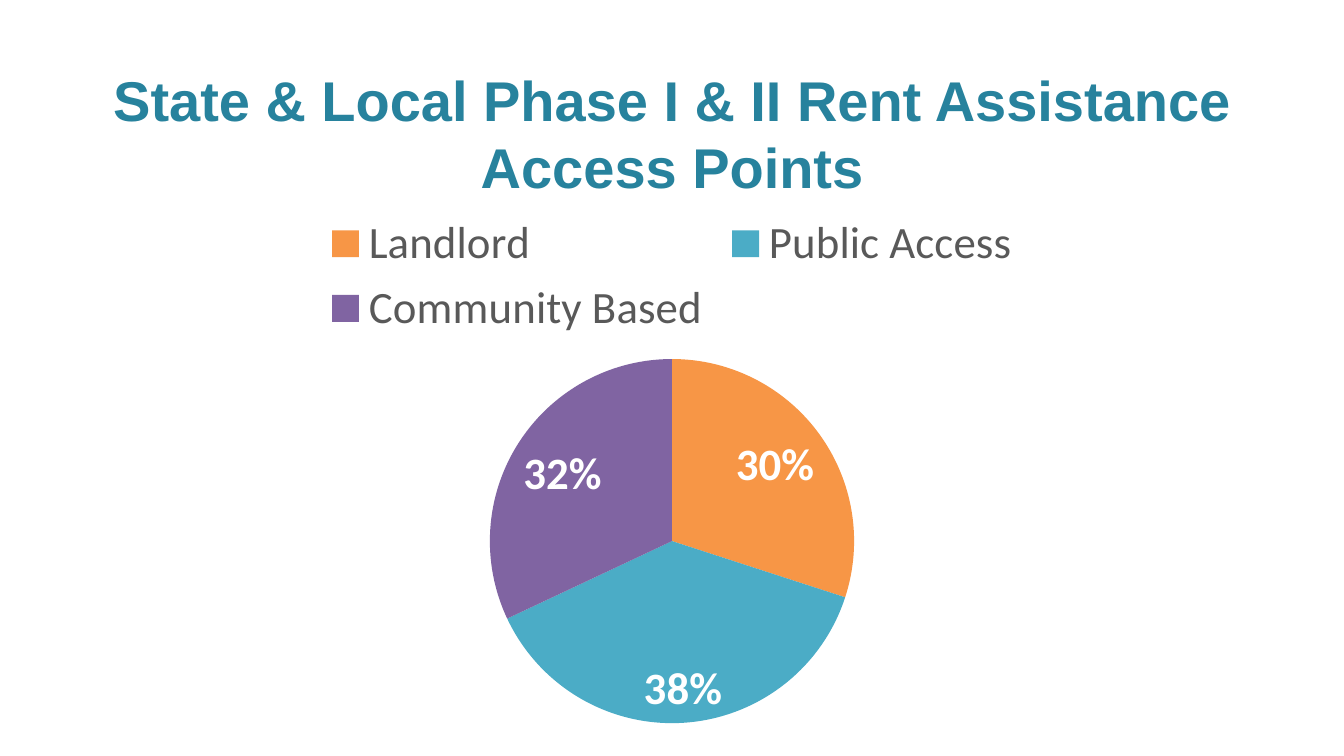
from pptx import Presentation
from pptx.chart.data import CategoryChartData
from pptx.dml.color import RGBColor
from pptx.enum.chart import XL_CHART_TYPE, XL_LABEL_POSITION, XL_LEGEND_POSITION
from pptx.enum.text import MSO_ANCHOR, PP_ALIGN
from pptx.util import Inches, Pt

TITLE_TEAL = RGBColor(0x27, 0x82, 0x9D)
LEGEND_GRAY = RGBColor(0x59, 0x59, 0x59)
WHITE = RGBColor(0xFF, 0xFF, 0xFF)
BLACK = RGBColor(0x00, 0x00, 0x00)
ORANGE = RGBColor(0xF7, 0x96, 0x46)
TEAL = RGBColor(0x4B, 0xAC, 0xC6)
PURPLE = RGBColor(0x80, 0x64, 0xA2)

SLIDE_WIDTH, SLIDE_HEIGHT = Inches(13.33), Inches(7.5)
ACCESS_POINTS = [
    ("Landlord", 30, ORANGE),
    ("Public Access", 38, TEAL),
    ("Community Based", 32, PURPLE),
]


def format_font(font, size, color, name="Calibri", bold=False):
    font.name = name
    font.size = Pt(size)
    font.bold = bold
    font.color.rgb = color


def add_text(slide, text, box, align=PP_ALIGN.CENTER, anchor=MSO_ANCHOR.MIDDLE, **font_format):
    shape = slide.shapes.add_textbox(*box)
    frame = shape.text_frame
    frame.word_wrap = True
    frame.vertical_anchor = anchor
    frame.margin_left = frame.margin_right = frame.margin_top = frame.margin_bottom = 0
    paragraph = frame.paragraphs[0]
    paragraph.alignment = align
    run = paragraph.add_run()
    run.text = text
    format_font(run.font, **font_format)
    return shape


def add_access_pie(slide, box):
    """Pie of access points with a legend above and percentages inside."""
    names, shares, colors = zip(*ACCESS_POINTS)
    data = CategoryChartData()
    data.categories = names
    data.add_series("Series 1", shares)
    chart = slide.shapes.add_chart(XL_CHART_TYPE.PIE, *box, data).chart
    format_font(chart.font, 10, BLACK)
    chart.has_title = False

    chart.has_legend = True
    chart.legend.position = XL_LEGEND_POSITION.TOP
    chart.legend.include_in_layout = False
    format_font(chart.legend.font, 32, LEGEND_GRAY)

    plot = chart.plots[0]
    plot.vary_by_categories = True
    for index, color in enumerate(colors):
        fill = plot.series[0].points[index].format.fill
        fill.solid()
        fill.fore_color.rgb = color

    labels = plot.series[0].data_labels
    labels.show_percentage = True
    labels.show_value = False
    labels.number_format = "0%"
    labels.number_format_is_linked = False
    labels.position = XL_LABEL_POSITION.INSIDE_END
    format_font(labels.font, 32, WHITE, bold=True)


def share_box(left, top, width, height):
    """Turn shares of the slide's size into a box of lengths."""
    return (int(SLIDE_WIDTH * left), int(SLIDE_HEIGHT * top),
            int(SLIDE_WIDTH * width), int(SLIDE_HEIGHT * height))


def main():
    presentation = Presentation()
    presentation.slide_width, presentation.slide_height = SLIDE_WIDTH, SLIDE_HEIGHT
    slide = presentation.slides.add_slide(presentation.slide_layouts[6])
    add_text(slide, "State & Local Phase I & II Rent Assistance Access Points",
             share_box(0.056, 0.085, 0.888, 0.18),
             size=40, color=TITLE_TEAL, name="Arial", bold=True)
    add_access_pie(slide, share_box(0.1155, 0.264, 0.769, 0.711))
    presentation.save("out.pptx")


if __name__ == "__main__":
    main()
